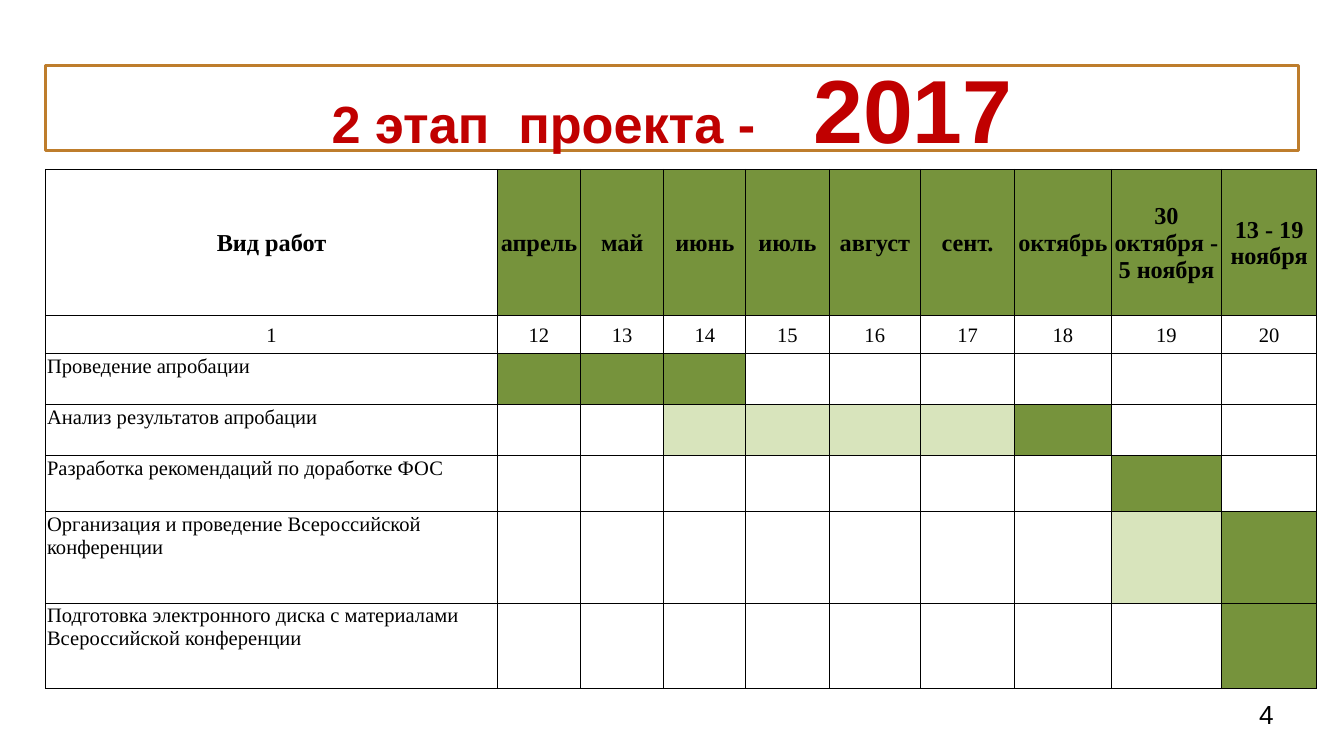
import pptx
import pptx.util
import pptx.dml.color
import pptx.enum.shapes
import pptx.enum.text
import pptx.oxml

Inches = pptx.util.Inches
Pt = pptx.util.Pt
RGBColor = pptx.dml.color.RGBColor
ALIGN = pptx.enum.text.PP_ALIGN
ANCHOR = pptx.enum.text.MSO_ANCHOR

BLACK = RGBColor(0x00, 0x00, 0x00)
WHITE = RGBColor(0xFF, 0xFF, 0xFF)
RED = RGBColor(0xC0, 0x00, 0x00)
BRONZE = RGBColor(0xBE, 0x7D, 0x2C)
GREEN = RGBColor(0x76, 0x93, 0x3C)
PALE_GREEN = RGBColor(0xD8, 0xE4, 0xBC)

MONTHS = ["апрель", "май", "июнь", "июль", "август", "сент.", "октябрь",
          "30 октября - 5 ноября", "13 - 19 ноября"]
WORKS = [
    ("Проведение апробации", "GGG------"),
    ("Анализ результатов апробации", "--PPPPG--"),
    ("Разработка рекомендаций по доработке ФОС", "-------G-"),
    ("Организация и проведение Всероссийской конференции", "-------PG"),
    ("Подготовка электронного диска с материалами Всероссийской конференции", "--------G"),
]
STAGE_COLORS = {"G": GREEN, "P": PALE_GREEN}
COLUMN_WIDTHS = [3.36, 0.62, 0.62, 0.61, 0.62, 0.68, 0.7, 0.72, 0.82, 0.71]
ROW_HEIGHTS = [1.09, 0.28, 0.38, 0.38, 0.42, 0.68, 0.63]


def write(paragraph, text, size=11, font="Times New Roman", color=BLACK, bold=False, align=ALIGN.LEFT):
    paragraph.alignment = align
    run = paragraph.add_run()
    run.text = text
    run.font.size = Pt(size)
    run.font.name = font
    run.font.color.rgb = color
    run.font.bold = bold


def frame_cell(cell):
    properties = cell._tc.get_or_add_tcPr()
    for position, side in enumerate(("lnL", "lnR", "lnT", "lnB")):
        border = pptx.oxml.parse_xml(
            f'<a:{side} xmlns:a="http://schemas.openxmlformats.org/drawingml/2006/main" w="{Pt(0.5)}">'
            f'<a:solidFill><a:srgbClr val="{BLACK}"/></a:solidFill></a:{side}>')
        properties.insert(position, border)


deck = pptx.Presentation()
deck.slide_width = Inches(10)
deck.slide_height = Inches(10 * 9 / 16)
slide = deck.slides.add_slide(deck.slide_layouts[6])

page_number = slide.shapes.add_textbox(Inches(9.27), Inches(5.1), Inches(0.6), Inches(0.43))
heading = slide.shapes.add_shape(pptx.enum.shapes.MSO_SHAPE.RECTANGLE,
                                 Inches(0.34), Inches(0.49), Inches(9.32), Inches(0.63))
heading.shadow.inherit = False
heading.fill.solid()
heading.fill.fore_color.rgb = WHITE
heading.line.color.rgb = BRONZE
heading.line.width = Pt(1.5)

for frame in (page_number.text_frame, heading.text_frame):
    frame.word_wrap = True
    frame.vertical_anchor = ANCHOR.MIDDLE
    frame.margin_left = frame.margin_right = frame.margin_top = frame.margin_bottom = Inches(0.1)

write(page_number.text_frame.paragraphs[0], "4", size=14, font="Arial")
for text, size in (("2 этап  проекта -    ", 28), ("2017", 48)):
    write(heading.text_frame.paragraphs[0], text, size=size, font="Arial",
          color=RED, bold=True, align=ALIGN.CENTER)

schedule = slide.shapes.add_table(len(ROW_HEIGHTS), len(COLUMN_WIDTHS), Inches(0.34), Inches(1.26),
                                  Inches(sum(COLUMN_WIDTHS)), Inches(sum(ROW_HEIGHTS))).table
schedule.first_row = False
schedule.horz_banding = False
for column, width in zip(schedule.columns, COLUMN_WIDTHS):
    column.width = Inches(width)
for row, height in zip(schedule.rows, ROW_HEIGHTS):
    row.height = Inches(height)

for cell in schedule.iter_cells():
    cell.margin_left = cell.margin_right = cell.margin_top = Inches(0.01)
    cell.margin_bottom = 0
    cell.fill.background()
    frame_cell(cell)

numbers = ["1"] + [str(number) for number in range(12, 21)]
for index, (month, number) in enumerate(zip(["Вид работ"] + MONTHS, numbers)):
    month_cell = schedule.cell(0, index)
    number_cell = schedule.cell(1, index)
    month_cell.vertical_anchor = number_cell.vertical_anchor = ANCHOR.MIDDLE
    write(month_cell.text_frame.paragraphs[0], month, size=13, bold=True, align=ALIGN.CENTER)
    write(number_cell.text_frame.paragraphs[0], number, align=ALIGN.CENTER)
    if index > 0:
        month_cell.fill.solid()
        month_cell.fill.fore_color.rgb = GREEN

for row_index, (work, stages) in enumerate(WORKS, start=2):
    write(schedule.cell(row_index, 0).text_frame.paragraphs[0], work)
    for column_index, stage in enumerate(stages, start=1):
        if stage in STAGE_COLORS:
            stage_cell = schedule.cell(row_index, column_index)
            stage_cell.fill.solid()
            stage_cell.fill.fore_color.rgb = STAGE_COLORS[stage]

deck.save("out.pptx")
